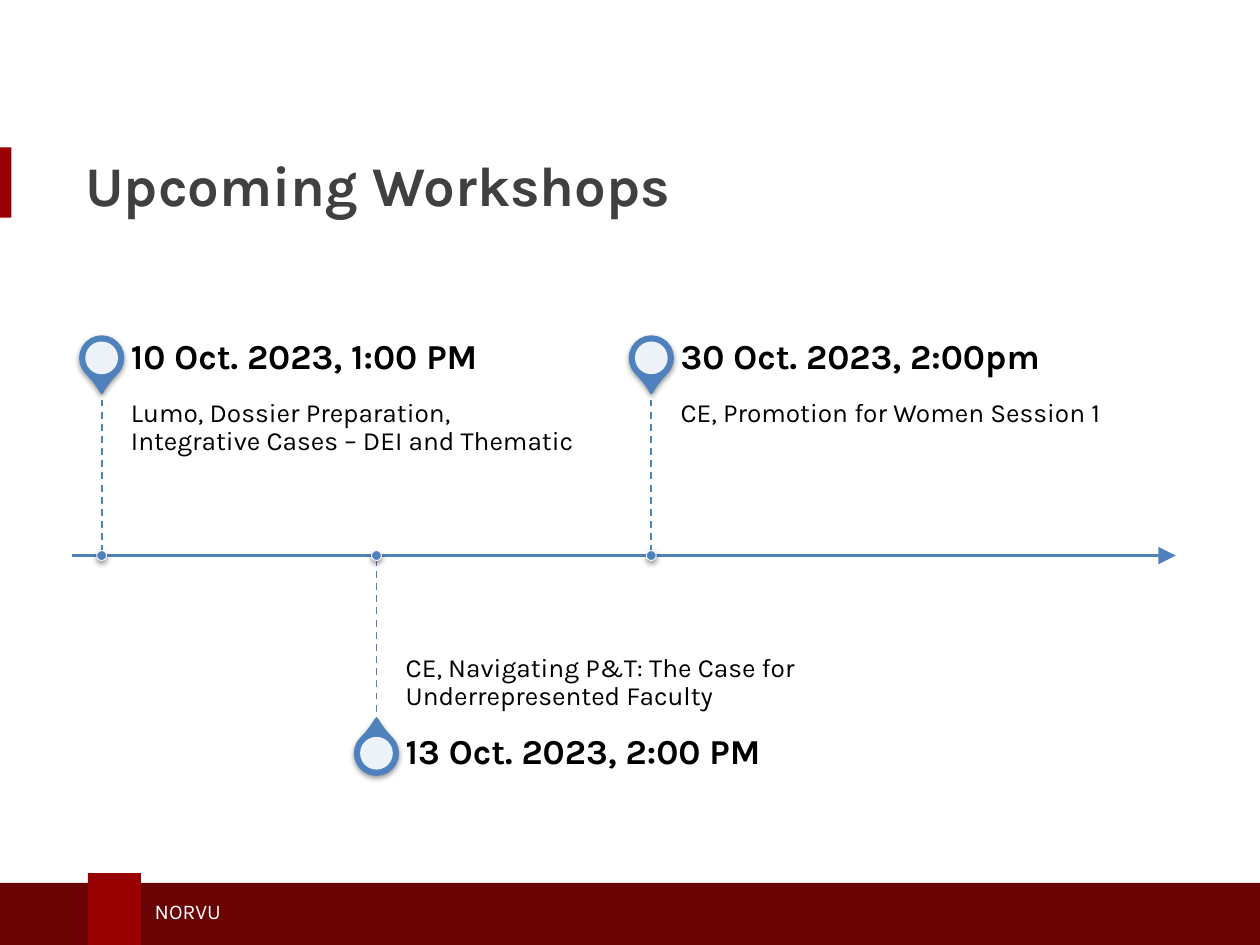
from dataclasses import dataclass

from lxml import etree
from pptx import Presentation
from pptx.dml.color import RGBColor
from pptx.enum.dml import MSO_LINE
from pptx.enum.shapes import MSO_CONNECTOR, MSO_SHAPE
from pptx.enum.text import MSO_ANCHOR, MSO_AUTO_SIZE, PP_ALIGN
from pptx.oxml.ns import qn
from pptx.util import Cm, Pt

RECT, OVAL, TEAR = MSO_SHAPE.RECTANGLE, MSO_SHAPE.OVAL, MSO_SHAPE.TEAR
STRAIGHT, DASH = MSO_CONNECTOR.STRAIGHT, MSO_LINE.DASH
TOP, MIDDLE, BOTTOM = MSO_ANCHOR.TOP, MSO_ANCHOR.MIDDLE, MSO_ANCHOR.BOTTOM
LEFT, NO_FIT = PP_ALIGN.LEFT, MSO_AUTO_SIZE.NONE


@dataclass(frozen=True)
class Theme:
    font: str = "Karla"
    crimson: str = "990000"
    maroon: str = "690304"
    blue: str = "4F81BD"
    white: str = "FFFFFF"
    black: str = "000000"
    charcoal: str = "404041"
    title_size: int = 32
    date_size: int = 20
    detail_size: int = 15
    footer_size: int = 12


THEME = Theme()
WORKSHOPS = [
    ("10 Oct. 2023, 1:00 PM",
     "Lumo, Dossier Preparation, Integrative Cases – DEI and Thematic"),
    ("13 Oct. 2023, 2:00 PM",
     "CE, Navigating P&T: The Case for Underrepresented Faculty"),
    ("30 Oct. 2023, 2:00pm", "CE, Promotion for Women Session 1"),
]


def rgb(color):
    return RGBColor.from_string(color)


def add_child(parent, tag, **attributes):
    child = etree.SubElement(parent, qn(tag))
    for name, setting in attributes.items():
        child.set(name, str(setting))
    return child


def add_solid(slide, kind, box, fill, outline=None, weight=0):
    solid = slide.shapes.add_shape(kind, *map(Cm, box))
    solid.shadow.inherit = False
    solid.fill.solid()
    solid.fill.fore_color.rgb = rgb(fill)
    if outline:
        solid.line.color.rgb = rgb(outline)
        solid.line.width = Pt(weight)
    else:
        solid.line.fill.background()
    return solid


def add_centred(slide, kind, x, y, size, *style):
    return add_solid(slide, kind, (x - size / 2, y - size / 2, size, size), *style)


def drop_shadow(solid):
    effects = solid._element.spPr.find(qn("a:effectLst"))
    shadow = add_child(effects, "a:outerShdw", blurRad=Pt(3.1), dist=Pt(1.6),
                       dir=5400000, rotWithShape=0)
    color = add_child(shadow, "a:srgbClr", val=THEME.black)
    add_child(color, "a:alpha", val=38000)


def add_line(slide, start, end, weight):
    line = slide.shapes.add_connector(STRAIGHT, *map(Cm, (*start, *end)))
    line.line.color.rgb = rgb(THEME.blue)
    line.line.width = Pt(weight)
    add_child(line._element.spPr, "a:effectLst")
    return line


def write(frame, words, size, color, bold=False, anchor=MIDDLE, spacing=1.0,
          insets=(0.25, 0.13, 0.25, 0.13)):
    frame.word_wrap = True
    frame.auto_size = NO_FIT
    frame.vertical_anchor = anchor
    (frame.margin_left, frame.margin_top,
     frame.margin_right, frame.margin_bottom) = map(Cm, insets)
    paragraph = frame.paragraphs[0]
    paragraph.alignment = LEFT
    paragraph.line_spacing = spacing
    run = paragraph.add_run()
    run.text = words
    run.font.name = THEME.font
    run.font.size = Pt(size)
    run.font.bold = bold
    run.font.color.rgb = rgb(color)


def add_text(slide, box, *content, **style):
    label = slide.shapes.add_textbox(*map(Cm, box))
    write(label.text_frame, *content, **style)


def add_heading(slide, left, top, width, height):
    add_solid(slide, RECT, (left, top + 0.15, 0.23, 1.42), THEME.crimson)
    title = slide.shapes.title
    title.left, title.top = Cm(left + 1.47), Cm(top)
    title.width, title.height = Cm(width - 1.47), Cm(height)
    write(title.text_frame, "Upcoming Workshops", THEME.title_size,
          THEME.charcoal, bold=True)


def add_footer(slide, left, top, width, height):
    add_solid(slide, RECT, (left, top, width, height), THEME.maroon)
    add_solid(slide, RECT, (left + 1.85, top - 0.2, 1.07, height + 0.2),
              THEME.crimson)
    add_text(slide, (left + 2.95, top + 0.18, 10.03, 0.76), "NORVU",
             THEME.footer_size, THEME.white)


def add_milestone(slide, x, axis, above, date, detail):
    stem, date_height, text_width = 3.39, 1.19, 9.25
    direction = -1 if above else 1
    pin_y = axis + direction * (stem + date_height / 2)
    text_left = x + 0.59

    pin = add_centred(slide, TEAR, x, pin_y, 0.84, THEME.blue, THEME.blue, 2)
    pin.adjustments[0] = 1.15
    pin.rotation = 135 if above else 315
    drop_shadow(pin)
    eye = add_centred(slide, OVAL, x, pin_y, 0.66, THEME.white)
    fill = eye._element.spPr.find(qn("a:solidFill"))
    add_child(fill[0], "a:alpha", val=90000)

    add_text(slide, (text_left, axis - stem if above else axis, text_width, stem),
             detail, THEME.detail_size, THEME.black,
             anchor=TOP if above else BOTTOM, spacing=0.9,
             insets=(0, 0.25, 0.25, 0.41) if above else (0, 0.41, 0, 0.25))
    add_text(slide, (text_left, pin_y - date_height / 2, text_width, date_height),
             date, THEME.date_size, THEME.black, bold=True, spacing=0.9,
             insets=(0, 0, 0.36, 0))

    guide = add_line(slide, (x, axis + direction * stem), (x, axis), 1)
    guide.line.dash_style = DASH
    drop_shadow(add_centred(slide, OVAL, x, axis, 0.2, THEME.blue,
                            THEME.white, 0.5))


def add_timeline(slide, left, top, width, height):
    axis = top + height / 2
    arrow = add_line(slide, (left, axis), (left + width, axis), 1.5)
    add_child(arrow.line._get_or_add_ln(), "a:tailEnd", type="triangle",
              w="lg", len="lg")
    first, step = left + 0.6, 5.54
    for order, (date, detail) in enumerate(WORKSHOPS):
        add_milestone(slide, first + order * step, axis, order % 2 == 0,
                      date, detail)


def main():
    deck = Presentation()
    deck.slide_width, deck.slide_height = Cm(25.4), Cm(19.05)
    slide = deck.slides.add_slide(deck.slide_layouts.get_by_name("Title Only"))
    add_heading(slide, 0, 2.82, 23.7, 1.78)
    add_footer(slide, -0.08, 17.8, 25.63, 1.27)
    add_timeline(slide, 1.45, 6.62, 22.25, 9.16)
    deck.save("out.pptx")


if __name__ == "__main__":
    main()
